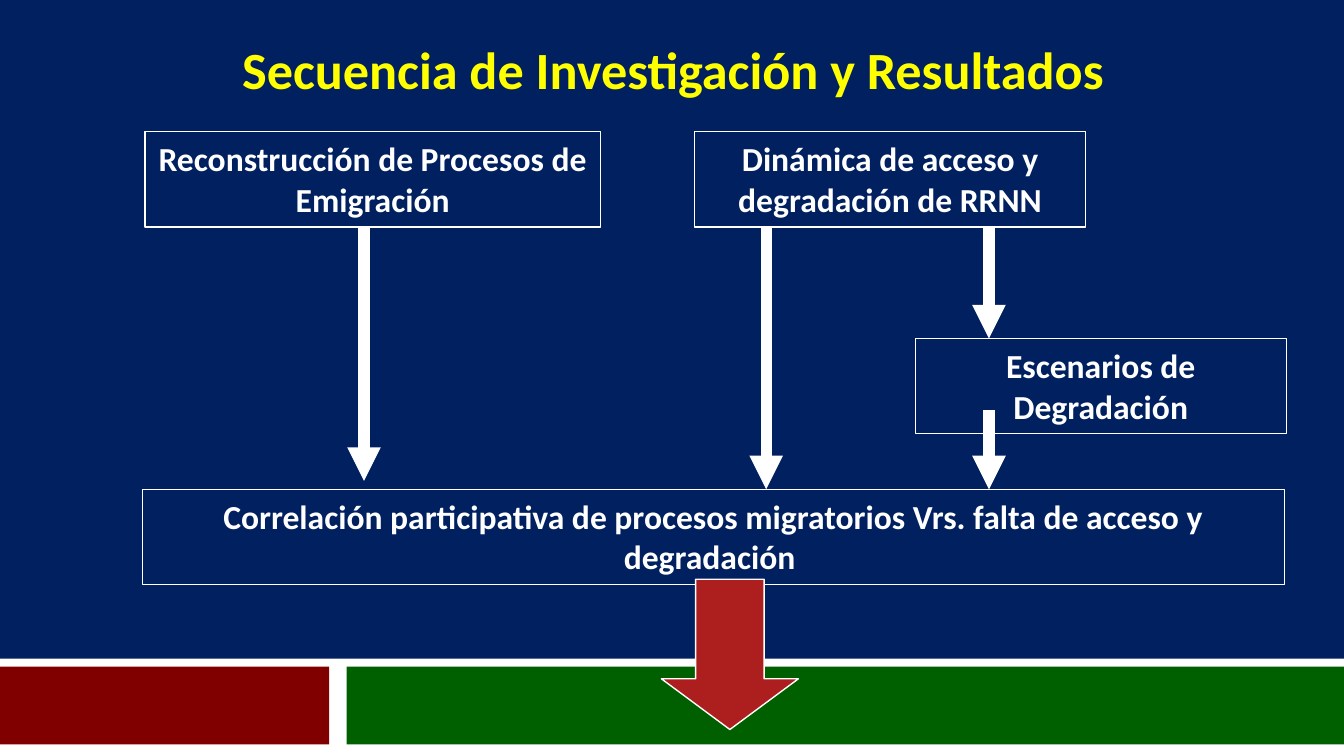
"""Build the slide on the research sequence and its results."""
from dataclasses import dataclass

from lxml import etree
from pptx import Presentation
from pptx.dml.color import RGBColor
from pptx.enum.shapes import MSO_CONNECTOR, MSO_SHAPE
from pptx.enum.text import MSO_ANCHOR, PP_ALIGN
from pptx.oxml.ns import qn
from pptx.shapes.autoshape import Shape
from pptx.slide import Slide
from pptx.util import Cm, Pt

RECTANGLE = MSO_SHAPE.RECTANGLE
DOWN_ARROW = MSO_SHAPE.DOWN_ARROW
STRAIGHT = MSO_CONNECTOR.STRAIGHT
CENTER = PP_ALIGN.CENTER
TOP = MSO_ANCHOR.TOP


@dataclass(frozen=True)
class Theme:
    font: str = "Calibri"
    title_size: float = 28
    body_size: float = 18
    outline: float = 0.75
    arrow: float = 6
    navy: str = "002060"
    white: str = "FFFFFF"
    yellow: str = "FFFF00"
    maroon: str = "800000"
    green: str = "006000"
    red: str = "AD1F1F"


@dataclass(frozen=True)
class Area:
    left: float
    top: float
    width: float
    height: float

    def lengths(self) -> tuple[Cm, Cm, Cm, Cm]:
        return Cm(self.left), Cm(self.top), Cm(self.width), Cm(self.height)


@dataclass(frozen=True)
class Step:
    text: str
    left: float
    top: float
    width: float


@dataclass(frozen=True)
class Arrow:
    x: float
    start: float
    end: float


THEME = Theme()
PAGE_WIDTH, PAGE_HEIGHT = 25.4, 14.29
STEP_HEIGHT = 1.8
FIRST_ROW, SCENARIO_ROW, LAST_ROW = 2.49, 6.4, 9.25
FIRST_ROW_END = FIRST_ROW + STEP_HEIGHT
SCENARIO_X = 18.69

BANDS = [
    (Area(0, 12.45, PAGE_WIDTH, PAGE_HEIGHT - 12.45), THEME.white),
    (Area(0, 12.6, 6.22, 1.47), THEME.maroon),
    (Area(6.55, 12.6, PAGE_WIDTH - 6.55, 1.47), THEME.green),
]
STEPS = [
    Step("Reconstrucción de Procesos de Emigración", 2.74, FIRST_ROW, 8.61),
    Step("Dinámica de acceso y degradación de RRNN", 13.13, FIRST_ROW, 7.39),
    Step("Escenarios de Degradación", 17.3, SCENARIO_ROW, 7.01),
    Step("Correlación participativa de procesos migratorios Vrs. "
         "falta de acceso y degradación ", 2.69, LAST_ROW, 21.59),
]
ARROWS = [
    Arrow(SCENARIO_X, FIRST_ROW_END, SCENARIO_ROW),
    Arrow(6.88, FIRST_ROW_END, 9.09),
    Arrow(14.48, FIRST_ROW_END, LAST_ROW),
    Arrow(SCENARIO_X, 7.75, LAST_ROW),
]


def color(value: str) -> RGBColor:
    return RGBColor.from_string(value)


def write(shape: Shape, text: str, size: float, ink: str) -> None:
    frame = shape.text_frame
    frame.word_wrap = True
    frame.vertical_anchor = TOP
    para = frame.paragraphs[0]
    para.text = text
    para.alignment = CENTER
    font = para.font
    font.name, font.size, font.bold = THEME.font, Pt(size), True
    font.color.rgb = color(ink)


def draw_shape(page: Slide, area: Area, kind: MSO_SHAPE = RECTANGLE,
               fill: str | None = None, outlined: bool = True) -> Shape:
    shape = page.shapes.add_shape(kind, *area.lengths())
    shape.shadow.inherit = False
    if fill:
        shape.fill.solid()
        shape.fill.fore_color.rgb = color(fill)
    else:
        shape.fill.background()
    if outlined:
        shape.line.color.rgb = color(THEME.white)
        shape.line.width = Pt(THEME.outline)
    else:
        shape.line.fill.background()
    return shape


def draw_step(page: Slide, step: Step) -> None:
    box = draw_shape(page, Area(step.left, step.top, step.width, STEP_HEIGHT))
    write(box, step.text, THEME.body_size, THEME.white)


def draw_arrow(page: Slide, arrow: Arrow) -> None:
    connector = page.shapes.add_connector(
        STRAIGHT, Cm(arrow.x), Cm(arrow.start), Cm(arrow.x), Cm(arrow.end))
    connector.line.color.rgb = color(THEME.white)
    connector.line.width = Pt(THEME.arrow)
    properties = connector.element.spPr
    etree.SubElement(properties.find(qn("a:ln")), qn("a:tailEnd"), type="triangle")
    etree.SubElement(properties, qn("a:effectLst"))


def main() -> None:
    deck = Presentation()
    deck.slide_width, deck.slide_height = Cm(PAGE_WIDTH), Cm(PAGE_HEIGHT)
    page = deck.slides.add_slide(deck.slide_layouts[6])
    page.background.fill.solid()
    page.background.fill.fore_color.rgb = color(THEME.navy)

    for area, fill in BANDS:
        draw_shape(page, area, fill=fill, outlined=False)
    title = page.shapes.add_textbox(*Area(2.11, 0.58, 21.21, 1.45).lengths())
    write(title, "Secuencia de Investigación y Resultados",
          THEME.title_size, THEME.yellow)
    for step in STEPS:
        draw_step(page, step)
    for arrow in ARROWS:
        draw_arrow(page, arrow)
    result = draw_shape(page, Area(12.5, 10.95, 2.59, 2.84), DOWN_ARROW, THEME.red)
    result.adjustments[1] = 0.37

    deck.save("out.pptx")


if __name__ == "__main__":
    main()
